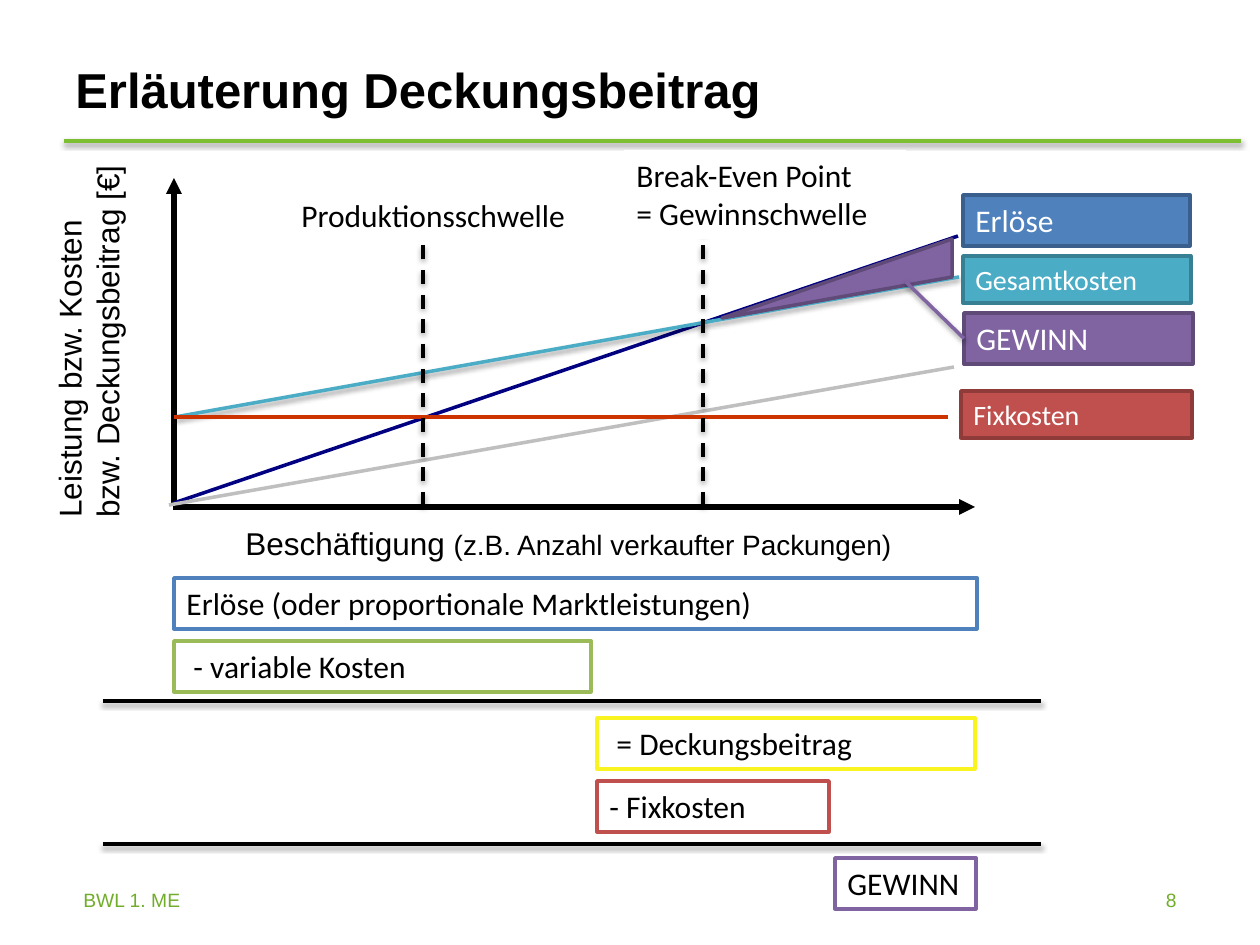
"""Build the slide that explains the contribution margin with a break-even diagram."""
from dataclasses import dataclass
from typing import Optional

from lxml.etree import SubElement
from pptx import Presentation
from pptx.dml.color import RGBColor
from pptx.enum.dml import MSO_LINE_DASH_STYLE as Dash
from pptx.enum.shapes import MSO_CONNECTOR as Connector, MSO_SHAPE as Shape
from pptx.enum.text import MSO_ANCHOR as Anchor, MSO_AUTO_SIZE as AutoSize, PP_ALIGN as Align
from pptx.oxml.ns import qn
from pptx.util import Emu, Pt

EMU_PER_PX = 914400 / 126
COLORS = {
    "black": "000000", "white": "FFFFFF", "navy": "000080", "grey": "BFBFBF",
    "rule": "7CBF33", "footer": "71AD2A", "blue": "4F81BD", "blue_edge": "3A5F8C",
    "teal": "4BACC6", "teal_edge": "377F92", "purple": "8064A2", "purple_edge": "5F4A78",
    "red": "C0504D", "red_edge": "8E3B39", "fixed": "CC3300", "yellow": "F9F420",
    "green": "9BBB59",
}


@dataclass
class Stroke:
    """A straight line with its ends in px."""
    x1: int
    y1: int
    x2: int
    y2: int
    color: str = "black"
    width: int = 2
    shadow: bool = False
    arrow: bool = False
    dashed: bool = False


@dataclass
class Label:
    """A text, boxed when it has a fill, whose runs are (text, size) pairs."""
    x: int
    y: int
    w: int
    h: int
    runs: list[tuple[str, int]]
    fill: Optional[str] = None
    edge: Optional[str] = None
    color: str = "black"
    font: str = "Calibri"
    bold: bool = False
    align: Align = Align.LEFT
    anchor: Anchor = Anchor.TOP
    wrap: bool = True
    grow: bool = True
    rotation: int = 0


def px(length: int) -> Emu:
    """Turn px into EMU."""
    return Emu(round(length * EMU_PER_PX))


def rgb(name: str) -> RGBColor:
    """Look a colour up by name."""
    return RGBColor.from_string(COLORS[name])


def draw_stroke(slide, stroke: Stroke):
    """Draw a line with its dash, arrowhead and shadow."""
    line = slide.shapes.add_connector(
        Connector.STRAIGHT, px(stroke.x1), px(stroke.y1), px(stroke.x2), px(stroke.y2))
    line.line.color.rgb = rgb(stroke.color)
    line.line.width = Pt(stroke.width)
    if stroke.dashed:
        line.line.dash_style = Dash.DASH
    properties = line.element.spPr
    if stroke.arrow:
        SubElement(properties.find(qn("a:ln")), qn("a:tailEnd"), type="triangle")
    effects = SubElement(properties, qn("a:effectLst"))
    if stroke.shadow:
        shadow = SubElement(effects, qn("a:outerShdw"), blurRad=str(Pt(3.1)),
                            dist=str(Pt(1.6)), dir="5400000", rotWithShape="0")
        shade = SubElement(shadow, qn("a:srgbClr"), val=COLORS["black"])
        SubElement(shade, qn("a:alpha"), val="38000")
    return line


def paint(shape, fill: str, edge: Optional[str]) -> None:
    """Give a shape a flat fill and an optional outline."""
    shape.shadow.inherit = False
    shape.fill.solid()
    shape.fill.fore_color.rgb = rgb(fill)
    if edge:
        shape.line.color.rgb = rgb(edge)
        shape.line.width = Pt(2)
    else:
        shape.line.fill.background()


def draw_label(slide, label: Label):
    """Draw a text, in a painted rectangle if it has a fill."""
    bounds = [px(length) for length in (label.x, label.y, label.w, label.h)]
    if label.fill:
        shape = slide.shapes.add_shape(Shape.RECTANGLE, *bounds)
        paint(shape, label.fill, label.edge)
    else:
        shape = slide.shapes.add_textbox(*bounds)
    shape.rotation = label.rotation
    frame = shape.text_frame
    frame.word_wrap = label.wrap
    frame.auto_size = AutoSize.SHAPE_TO_FIT_TEXT if label.grow else AutoSize.NONE
    frame.vertical_anchor = label.anchor
    paragraph = frame.paragraphs[0]
    paragraph.alignment = label.align
    paragraph.text = label.runs[0][0]
    for text, _ in label.runs[1:]:
        paragraph.add_run().text = text
    sizes = [label.runs[0][1]] * (len(paragraph.runs) - len(label.runs))
    sizes += [size for _, size in label.runs]
    for run, size in zip(paragraph.runs, sizes):
        run.font.name = label.font
        run.font.size = Pt(size)
        run.font.bold = label.bold
        run.font.color.rgb = rgb(label.color)
    return shape


def draw_profit_area(slide) -> None:
    """Fill the wedge between revenue and total cost."""
    builder = slide.shapes.build_freeform(722, 318, scale=EMU_PER_PX)
    builder.add_line_segments([(952, 239), (952, 277)], close=True)
    paint(builder.convert_to_shape(), "purple", "purple_edge")


FRAME = [
    Label(63, 47, 1120, 84, [("Erläuterung Deckungsbeitrag", 28)], font="Arial", bold=True,
          anchor=Anchor.MIDDLE, grow=False),
    Label(233, 518, 694, 50, [("Beschäftigung ", 18), ("(z.B. Anzahl verkaufter Packungen)", 16)],
          fill="white", font="Arial"),
    Label(-108, 289, 393, 89, [("Leistung bzw. Kosten \nbzw. Deckungsbeitrag [€]", 18)],
          font="Arial", rotation=270),
    Label(927, 882, 262, 42, [("8", 11)], color="footer", font="Arial", align=Align.RIGHT,
          grow=False),
    Label(71, 882, 1120, 42, [("BWL 1. ME", 11)], color="footer", font="Arial", grow=False),
]
CURVES = [
    Stroke(64, 141, 1241, 141, "rule", shadow=True),
    Stroke(174, 505, 174, 178, width=3, arrow=True),
    Stroke(173, 507, 975, 507, width=3, arrow=True),
    Stroke(174, 503, 958, 236, "navy"),
    Stroke(169, 505, 954, 367, "grey"),
    Stroke(175, 417, 959, 277, "teal", shadow=True),
    Stroke(174, 417, 948, 417, "fixed"),
]
SUM_RULES = [Stroke(103, y, 1041, y, shadow=True) for y in (701, 844)]
THRESHOLDS = [Stroke(x, 506, x, 217, shadow=True, dashed=True) for x in (423, 703)]
THRESHOLD_LABELS = [
    Label(624, 150, 282, 89, [("Break-Even Point \n= Gewinnschwelle", 18)], "white", wrap=False),
    Label(289, 190, 292, 50, [("Produktionsschwelle", 18)], "white", wrap=False),
]
CALCULATION = [
    Label(x, y, w, 51, [(text, 18)], "white", edge) for x, y, w, text, edge in (
        (174, 578, 803, "Erlöse (oder proportionale Marktleistungen)", "blue"),
        (174, 641, 417, " - variable Kosten", "green"),
        (597, 718, 378, " = Deckungsbeitrag", "yellow"),
        (597, 781, 232, "- Fixkosten", "red"),
        (835, 858, 141, "GEWINN", "purple"))
]
LEGEND = [
    Label(x, y, w, h, [(text, size)], fill, f"{fill}_edge", "white")
    for x, y, w, h, text, size, fill in (
        (963, 195, 227, 51, "Erlöse", 18, "blue"),
        (963, 256, 228, 47, "Gesamtkosten", 16, "teal"),
        (961, 391, 231, 47, "Fixkosten", 16, "red"))
]
PROFIT = Label(964, 313, 229, 51, [("GEWINN", 18)], "purple", "purple_edge", "white")


def main() -> None:
    """Assemble and save the slide."""
    deck = Presentation()
    deck.slide_width, deck.slide_height = px(1260), px(945)
    slide = deck.slides.add_slide(deck.slide_layouts[6])
    for label in FRAME:
        draw_label(slide, label)
    for stroke in CURVES + SUM_RULES:
        draw_stroke(slide, stroke)
    draw_profit_area(slide)
    profit = draw_label(slide, PROFIT)
    pointer = draw_stroke(slide, Stroke(906, 282, 964, 338, "purple", shadow=True))
    pointer.end_connect(profit, 1)
    for stroke in THRESHOLDS:
        draw_stroke(slide, stroke)
    for label in THRESHOLD_LABELS + CALCULATION + LEGEND:
        draw_label(slide, label)
    deck.save("out.pptx")


if __name__ == "__main__":
    main()
